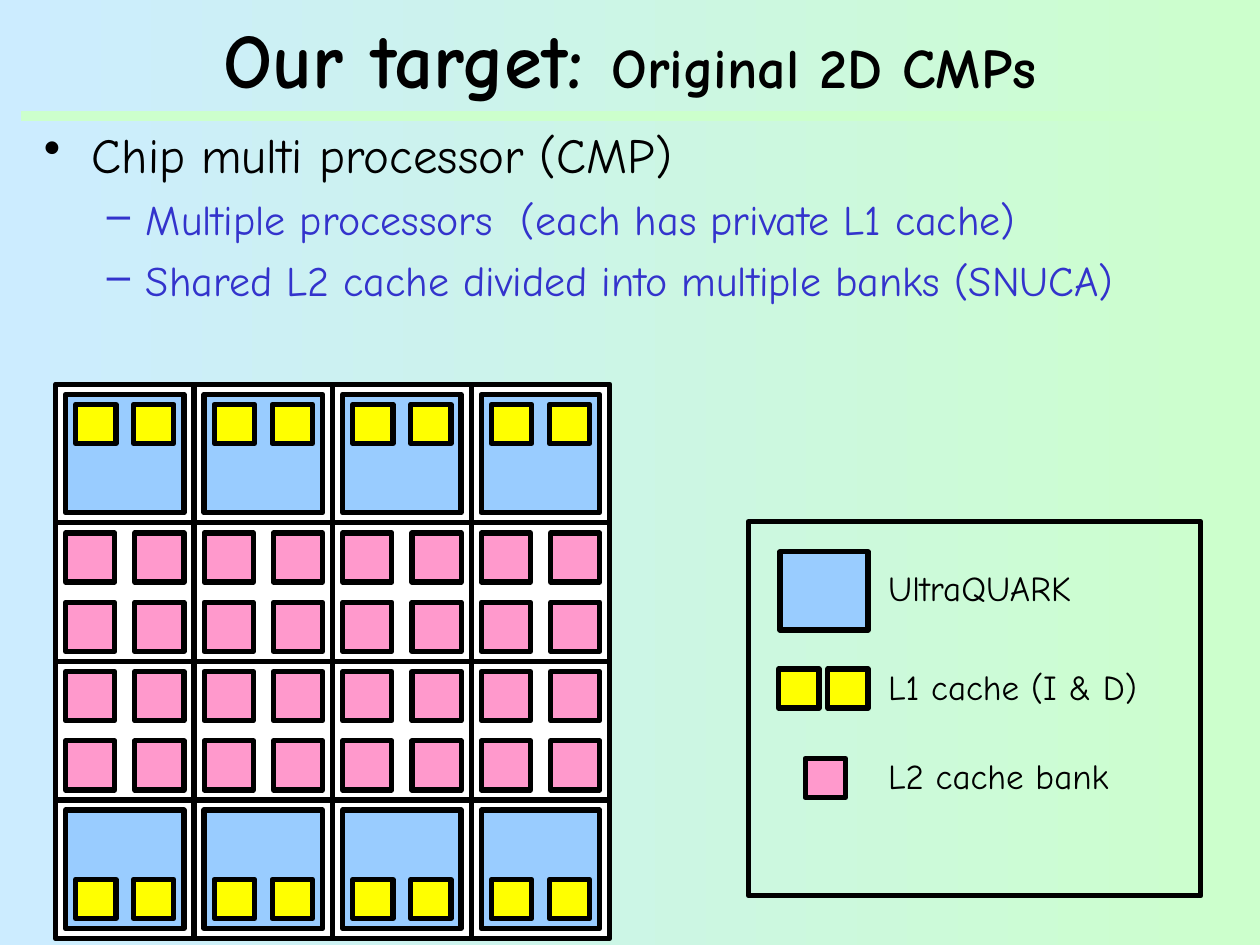
import pptx
import pptx.util
import pptx.dml.color
import pptx.enum.shapes
import pptx.enum.text
import pptx.oxml.ns
from lxml import etree

Inches, Pt = pptx.util.Inches, pptx.util.Pt
RGBColor = pptx.dml.color.RGBColor
PP_ALIGN = pptx.enum.text.PP_ALIGN
MSO_ANCHOR = pptx.enum.text.MSO_ANCHOR
qn = pptx.oxml.ns.qn

FONT = "Comic Neue"
BLACK = RGBColor(0x00, 0x00, 0x00)
WHITE = RGBColor(0xFF, 0xFF, 0xFF)
INDIGO = RGBColor(0x33, 0x33, 0xCC)
SKY = RGBColor(0xCC, 0xEC, 0xFF)
MINT = RGBColor(0xCC, 0xFF, 0xCC)
CORE_BLUE = RGBColor(0x99, 0xCC, 0xFF)
L1_YELLOW = RGBColor(0xFF, 0xFF, 0x00)
L2_PINK = RGBColor(0xFF, 0x99, 0xCC)

prs = pptx.Presentation()
prs.slide_width, prs.slide_height = Inches(10), Inches(7.5)
s = prs.slides.add_slide(prs.slide_layouts[6])


def add_text(paragraphs, left, top, width, height, bold=False, wrap=True,
             align=PP_ALIGN.LEFT, anchor=MSO_ANCHOR.TOP):
    """Add a text box; each paragraph is a list of (text, size, color) runs."""
    sp = s.shapes.add_textbox(Inches(left), Inches(top), Inches(width), Inches(height))
    tf = sp.text_frame
    tf.word_wrap = wrap
    tf.vertical_anchor = anchor
    for i, runs in enumerate(paragraphs):
        p = tf.add_paragraph() if i else tf.paragraphs[0]
        p.alignment = align
        for text, size, color in runs:
            r = p.add_run()
            r.text = text
            r.font.name = FONT
            r.font.size = Pt(size)
            r.font.bold = bold
            r.font.color.rgb = color
    return tf


def add_box(left, top, width, height, color=None):
    sp = s.shapes.add_shape(pptx.enum.shapes.MSO_SHAPE.RECTANGLE, Inches(left),
                            Inches(top), Inches(width), Inches(height))
    sp.shadow.inherit = False
    if color is None:
        sp.fill.background()
    else:
        sp.fill.solid()
        sp.fill.fore_color.rgb = color
    sp.line.color.rgb = BLACK
    sp.line.width = Pt(3)


# Background gradient, left to right
fill = s.background.fill
fill.gradient()
fill.gradient_angle = 0
for stop, position, color in zip(fill.gradient_stops, (0, 1), (SKY, MINT)):
    stop.position = position
    stop.color.rgb = color

# Rule under the title
rule = s.shapes.add_connector(pptx.enum.shapes.MSO_CONNECTOR.STRAIGHT,
                              Inches(0.17), Inches(0.92), Inches(9.92), Inches(0.92))
rule.line.color.rgb = MINT
rule.line.width = Pt(6)
etree.SubElement(rule.element.spPr, qn("a:effectLst"))

# Title
add_text([[("Our target: ", 44, BLACK), ("Original 2D CMPs", 32, BLACK)]],
         0.25, 0.08, 9.5, 0.75, bold=True,
         align=PP_ALIGN.CENTER, anchor=MSO_ANCHOR.MIDDLE)

# Bulleted text
tf = add_text([[("Chip multi processor (CMP)", 28, BLACK)],
               [("Multiple processors  (each has private L1 cache)", 24, INDIGO)],
               [("Shared L2 cache divided into multiple banks (SNUCA)", 24, INDIGO)]],
              0.25, 0.94, 9.59, 2.27)
for p, level in zip(tf.paragraphs, (0, 1, 1)):
    p.level = level
    p.space_before = Pt(6)
    bullet, margin, hang = (("•", 0.38, 0.38), ("–", 0.81, 0.31))[level]
    pPr = p._p.get_or_add_pPr()
    pPr.set("marL", str(Inches(margin)))
    pPr.set("indent", str(-Inches(hang)))
    etree.SubElement(pPr, qn("a:buChar"), char=bullet)

# Chip: 4 x 4 tiles, processors in the outer rows and cache in the inner rows
CHIP_LEFT, CHIP_TOP, TILE, GAP = 0.44, 3.05, 1.1, 0.08
CORE, BANK = TILE - 2 * GAP, 0.39
L1_WIDTH, L1_HEIGHT = 0.32, 0.31
for row in range(4):
    for col in range(4):
        x, y = CHIP_LEFT + col * TILE, CHIP_TOP + row * TILE
        add_box(x, y, TILE, TILE, WHITE)
        if row in (0, 3):
            add_box(x + GAP, y + GAP, CORE, CORE, CORE_BLUE)
            l1_top = y + 2 * GAP if row == 0 else y + TILE - 2 * GAP - L1_HEIGHT
            for l1_left in (x + 2 * GAP, x + TILE - 2 * GAP - L1_WIDTH):
                add_box(l1_left, l1_top, L1_WIDTH, L1_HEIGHT, L1_YELLOW)
        else:
            for dy in (GAP, TILE - GAP - BANK):
                for dx in (GAP, TILE - GAP - BANK):
                    add_box(x + dx, y + dy, BANK, BANK, L2_PINK)

# Legend
add_box(5.94, 4.14, 3.59, 2.97)
add_box(6.19, 4.38, 0.7, 0.62, CORE_BLUE)
for left, top, color in ((6.18, 5.31, L1_YELLOW), (6.57, 5.31, L1_YELLOW),
                         (6.39, 6.02, L2_PINK)):
    add_box(left, top, L1_WIDTH, L1_HEIGHT, color)
for label, top, width in (("UltraQUARK", 4.45, 1.82), ("L1 cache (I & D)", 5.23, 2.4),
                          ("L2 cache bank", 5.94, 2.05)):
    add_text([[(label, 20, BLACK)]], 6.95, top, width, 0.44, wrap=False)

prs.save("out.pptx")
